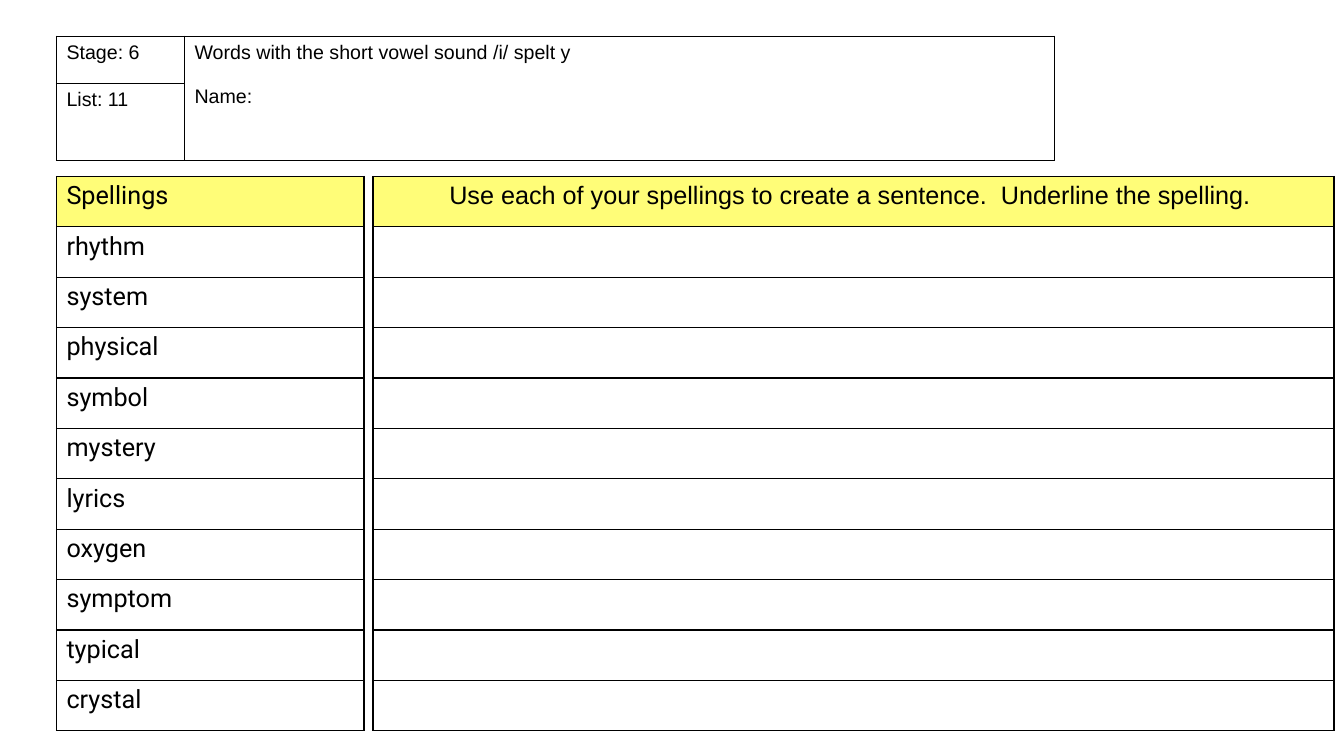
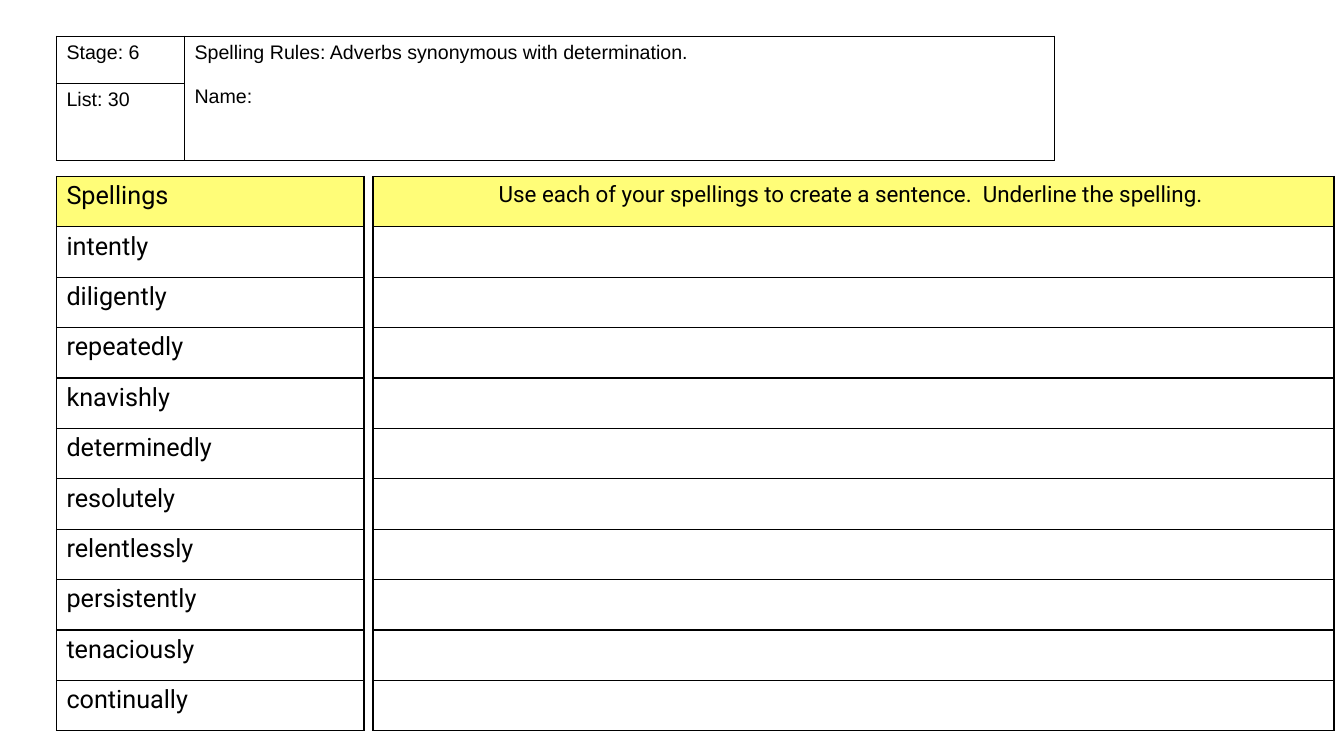
from lxml.etree import SubElement
from pptx import Presentation
from pptx.dml.color import RGBColor
from pptx.enum.text import PP_ALIGN
from pptx.oxml.ns import qn
from pptx.util import Emu, Pt

PX = 9144  # EMU per px, 100 px to the inch
COLORS = {"ink": "000000", "heading": "FFFD78"}
BORDER = Pt(1)

# Text formats
LABEL = {"name": "Arial", "size": Pt(14)}
WORD = {"name": "Roboto", "size": Pt(18)}
PROMPT_LARGE = {"name": "Arial", "size": Pt(18)}
PROMPT_SMALL = {"name": "Roboto", "size": Pt(16)}

# Page grid
LEFT, HEADER_TOP, LIST_TOP = 56, 36, 175
ROW_HEIGHT = 50
WORD_WIDTH, SENTENCE_LEFT, SENTENCE_WIDTH = 305, 370, 953
PROMPT = "Use each of your spellings to create a sentence.  Underline the spelling. "

SHEETS = [
    {
        "number": 11,
        "rule": "Words with the short vowel sound /i/ spelt y",
        "prompt": PROMPT_LARGE,
        "words": ["rhythm", "system", "physical", "symbol", "mystery",
                  "lyrics", "oxygen", "symptom", "typical", "crystal"],
    },
    {
        "number": 30,
        "rule": "Spelling Rules: Adverbs synonymous with determination.",
        "prompt": PROMPT_SMALL,
        "words": ["intently", "diligently", "repeatedly", "knavishly", "determinedly",
                  "resolutely", "relentlessly", "persistently", "tenaciously", "continually"],
    },
]


class Worksheet:
    def __init__(self, width, height):
        self.prs = Presentation()
        self.prs.slide_width, self.prs.slide_height = Emu(width * PX), Emu(height * PX)
        self.s = None

    def new_slide(self):
        self.s = self.prs.slides.add_slide(self.prs.slide_layouts[6])

    def table(self, left, top, widths, heights):
        """Add a plain table with black rules and no banding."""
        box = [Emu(v * PX) for v in (left, top, sum(widths), sum(heights))]
        tbl = self.s.shapes.add_table(len(heights), len(widths), *box).table
        tbl.first_row = tbl.horz_banding = False
        for col, width in zip(tbl.columns, widths):
            col.width = Emu(width * PX)
        for row, height in zip(tbl.rows, heights):
            row.height = Emu(height * PX)
        for cell in tbl.iter_cells():
            self.borders(cell)
            cell.fill.background()
        return tbl

    def borders(self, cell):
        tcPr = cell._tc.get_or_add_tcPr()
        for side in ("lnL", "lnR", "lnT", "lnB"):
            ln = SubElement(tcPr, qn(f"a:{side}"), w=str(BORDER))
            fill = SubElement(ln, qn("a:solidFill"))
            SubElement(fill, qn("a:srgbClr"), val=COLORS["ink"])

    def text(self, cell, lines, style, align=PP_ALIGN.LEFT, gap=0):
        """Write one paragraph per line, with a gap in points between them."""
        tf = cell.text_frame
        for i, line in enumerate(lines):
            p = tf.add_paragraph() if i else tf.paragraphs[0]
            p.alignment = align
            if i:
                p.space_before = Pt(gap)
            r = p.add_run()
            r.text = line
            for key, value in style.items():
                setattr(r.font, key, value)
            r.font.color.rgb = RGBColor.from_string(COLORS["ink"])

    def heading(self, cell, line, style, align=PP_ALIGN.LEFT):
        cell.fill.solid()
        cell.fill.fore_color.rgb = RGBColor.from_string(COLORS["heading"])
        self.text(cell, [line], style, align)

    def header(self, number, rule):
        tbl = self.table(LEFT, HEADER_TOP, [127, 863], [47, 76])
        tbl.cell(0, 1).merge(tbl.cell(1, 1))
        self.text(tbl.cell(0, 0), ["Stage: 6"], LABEL)
        self.text(tbl.cell(1, 0), [f"List: {number}"], LABEL)
        self.text(tbl.cell(0, 1), [rule, "Name:"], LABEL, gap=16)

    def word_list(self, words):
        tbl = self.table(LEFT, LIST_TOP, [WORD_WIDTH], [ROW_HEIGHT] * (len(words) + 1))
        self.heading(tbl.cell(0, 0), "Spellings", WORD)
        for i, word in enumerate(words, 1):
            self.text(tbl.cell(i, 0), [word], WORD)

    def sentence_grid(self, count, style):
        tbl = self.table(SENTENCE_LEFT, LIST_TOP, [SENTENCE_WIDTH], [ROW_HEIGHT] * (count + 1))
        self.heading(tbl.cell(0, 0), PROMPT, style, PP_ALIGN.CENTER)


def main():
    ws = Worksheet(1333, 750)
    for sheet in SHEETS:
        ws.new_slide()
        ws.word_list(sheet["words"])
        ws.header(sheet["number"], sheet["rule"])
        ws.sentence_grid(len(sheet["words"]), sheet["prompt"])
    ws.prs.save("out.pptx")


if __name__ == "__main__":
    main()
